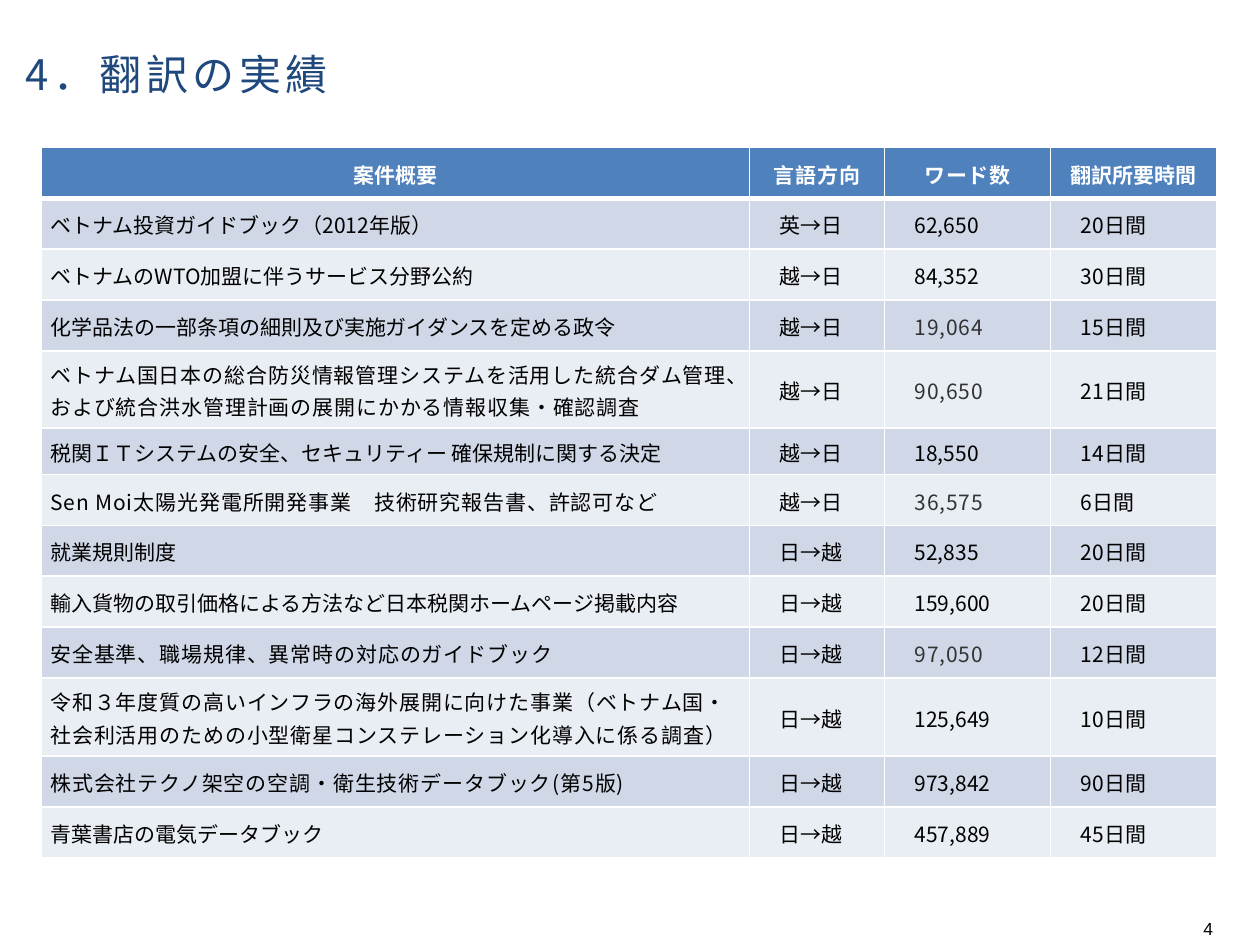
from dataclasses import dataclass

from lxml import etree
from pptx import Presentation
from pptx.dml.color import RGBColor
from pptx.enum.text import MSO_ANCHOR, PP_ALIGN
from pptx.oxml.ns import qn
from pptx.util import Inches, Pt

MIDDLE = MSO_ANCHOR.MIDDLE
LEFT, CENTER = PP_ALIGN.LEFT, PP_ALIGN.CENTER
SLIDE_WIDTH, SLIDE_HEIGHT = 10, 7.5
JAPANESE, LATIN = "Noto Sans CJK JP", "Arial"
WHITE, BLACK, GREY, NAVY = "FFFFFF", "000000", "333333", "1F487C"
HEADER_FILL, BAND_FILLS = "4F81BD", ("D0D8E8", "E9EDF4")

# Table grid, in inches
TABLE_LEFT, TABLE_TOP, TABLE_HEIGHT = 0.33, 1.17, 5.64
COLUMN_WIDTHS = (5.62, 1.07, 1.32, 1.32)
SPECIAL_HEIGHTS = {4: 0.61, 5: 0.37, 10: 0.62}
CELL_MARGIN, VALUE_MARGIN = 0.07, 0.24


@dataclass(frozen=True)
class Style:
    size: float = 12
    color: str = BLACK
    font: str = JAPANESE
    bold: bool = False
    spacing: float = 0


@dataclass(frozen=True)
class Job:
    summary: str
    direction: str
    words: str
    days: str
    wide_summary: bool = False
    grey_words: bool = False


PLAIN, WIDE = Style(), Style(spacing=0.5)
WIDE_GREY = Style(color=GREY, spacing=0.5)
HEAD, HEAD_WIDE = Style(color=WHITE, bold=True), Style(color=WHITE, bold=True, spacing=0.5)
HEADERS = (("案件概要", HEAD), ("言語方向", HEAD_WIDE),
           ("ワード数", HEAD_WIDE), ("翻訳所要時間", HEAD))

JOBS = (
    Job("ベトナム投資ガイドブック（2012年版）", "英→日", "62,650", "20日間"),
    Job("ベトナムのWTO加盟に伴うサービス分野公約", "越→日", "84,352", "30日間"),
    Job("化学品法の一部条項の細則及び実施ガイダンスを定める政令", "越→日", "19,064", "15日間",
        grey_words=True),
    Job("ベトナム国日本の総合防災情報管理システムを活用した統合ダム管理、"
        "および統合洪水管理計画の展開にかかる情報収集・確認調査", "越→日", "90,650", "21日間",
        wide_summary=True, grey_words=True),
    Job("税関ＩＴシステムの安全、セキュリティー 確保規制に関する決定", "越→日", "18,550", "14日間"),
    Job("Sen Moi太陽光発電所開発事業　技術研究報告書、許認可など", "越→日", "36,575", "6日間",
        wide_summary=True, grey_words=True),
    Job("就業規則制度", "日→越", "52,835", "20日間"),
    Job("輸入貨物の取引価格による方法など日本税関ホームページ掲載内容", "日→越", "159,600", "20日間"),
    Job("安全基準、職場規律、異常時の対応のガイドブック", "日→越", "97,050", "12日間",
        wide_summary=True, grey_words=True),
    Job("令和３年度質の高いインフラの海外展開に向けた事業（ベトナム国・"
        "社会利活用のための小型衛星コンステレーション化導入に係る調査）", "日→越", "125,649", "10日間",
        wide_summary=True),
    Job("株式会社テクノ架空の空調・衛生技術データブック(第5版)", "日→越", "973,842", "90日間",
        wide_summary=True),
    Job("青葉書店の電気データブック", "日→越", "457,889", "45日間"),
)


def rgb(color: str) -> RGBColor:
    return RGBColor.from_string(color)


def write(frame, text: str, style: Style, align=LEFT, line_spacing: float = 1) -> None:
    """Put one styled span in the first paragraph of a text frame."""
    para = frame.paragraphs[0]
    para.alignment = align
    para.line_spacing = line_spacing
    span = para.add_run()
    span.text = text
    formats = {"size": Pt(style.size), "bold": style.bold, "name": style.font}
    for name, value in formats.items():
        setattr(span.font, name, value)
    span.font.color.rgb = rgb(style.color)
    properties = span.font._element
    properties.set("spc", str(round(style.spacing * 100)))
    etree.SubElement(properties, qn("a:ea")).set("typeface", style.font)


def add_text(page, left: float, top: float, width: float, height: float,
             text: str, style: Style, inset: float = 0) -> None:
    """Add a text box placed by shares of the slide's size."""
    box = page.shapes.add_textbox(
        Inches(left * SLIDE_WIDTH), Inches(top * SLIDE_HEIGHT),
        Inches(width * SLIDE_WIDTH), Inches(height * SLIDE_HEIGHT))
    frame = box.text_frame
    margins = {"margin_left": inset, "margin_right": 0, "margin_top": 0.01, "margin_bottom": 0}
    for name, value in margins.items():
        setattr(frame, name, Inches(value))
    frame.word_wrap = True
    write(frame, text, style)


def set_borders(cell, top: float, bottom: float) -> None:
    """Draw white cell borders; widths are in points."""
    properties = cell._tc.get_or_add_tcPr()
    widths = {"a:lnL": 1, "a:lnR": 1, "a:lnT": top, "a:lnB": bottom}
    for position, (tag, width) in enumerate(widths.items()):
        line = etree.Element(qn(tag), w=str(Pt(width)))
        fill = etree.SubElement(line, qn("a:solidFill"))
        etree.SubElement(fill, qn("a:srgbClr"), val=WHITE)
        properties.insert(position, line)


def fill_cell(cell, row: int, column: int, text: str, style: Style) -> None:
    header = row == 0
    indented = not header and column > 0
    formats = {
        "vertical_anchor": MIDDLE,
        "margin_left": Inches(VALUE_MARGIN if indented else CELL_MARGIN),
        "margin_right": Inches(CELL_MARGIN),
        "margin_top": 0,
        "margin_bottom": 0,
    }
    for name, value in formats.items():
        setattr(cell, name, value)
    cell.fill.solid()
    cell.fill.fore_color.rgb = rgb(HEADER_FILL if header else BAND_FILLS[(row - 1) % 2])
    set_borders(cell, top=3 if row == 1 else 1, bottom=3 if header else 1)
    write(cell.text_frame, text, style, CENTER if header else LEFT, 1.07)


def job_cells(job: Job) -> tuple:
    return ((job.summary, WIDE if job.wide_summary else PLAIN),
            (job.direction, PLAIN),
            (job.words, WIDE_GREY if job.grey_words else PLAIN),
            (job.days, PLAIN))


def add_job_table(page) -> None:
    rows = [HEADERS, *map(job_cells, JOBS)]
    table = page.shapes.add_table(
        len(rows), len(COLUMN_WIDTHS), Inches(TABLE_LEFT), Inches(TABLE_TOP),
        Inches(sum(COLUMN_WIDTHS)), Inches(TABLE_HEIGHT)).table
    for column, width in zip(table.columns, COLUMN_WIDTHS):
        column.width = Inches(width)
    # Ordinary rows share what the special rows leave
    remaining = TABLE_HEIGHT - sum(SPECIAL_HEIGHTS.values())
    common_height = remaining / (len(rows) - len(SPECIAL_HEIGHTS))
    for row, cells in enumerate(rows):
        table.rows[row].height = Inches(SPECIAL_HEIGHTS.get(row, common_height))
        for column, (text, style) in enumerate(cells):
            fill_cell(table.cell(row, column), row, column, text, style)


def main() -> None:
    deck = Presentation()
    deck.slide_width, deck.slide_height = Inches(SLIDE_WIDTH), Inches(SLIDE_HEIGHT)
    page = deck.slides.add_slide(deck.slide_layouts[6])
    # Title
    add_text(page, 0.02, 0.05, 0.56, 0.06, "4．翻訳の実績",
             Style(size=24, color=NAVY, spacing=2.6))
    # Translation record
    add_job_table(page)
    # Page number
    add_text(page, 0.95, 0.97, 0.02, 0.02, "4", Style(size=10, font=LATIN), inset=0.05)
    deck.save("out.pptx")


if __name__ == "__main__":
    main()
